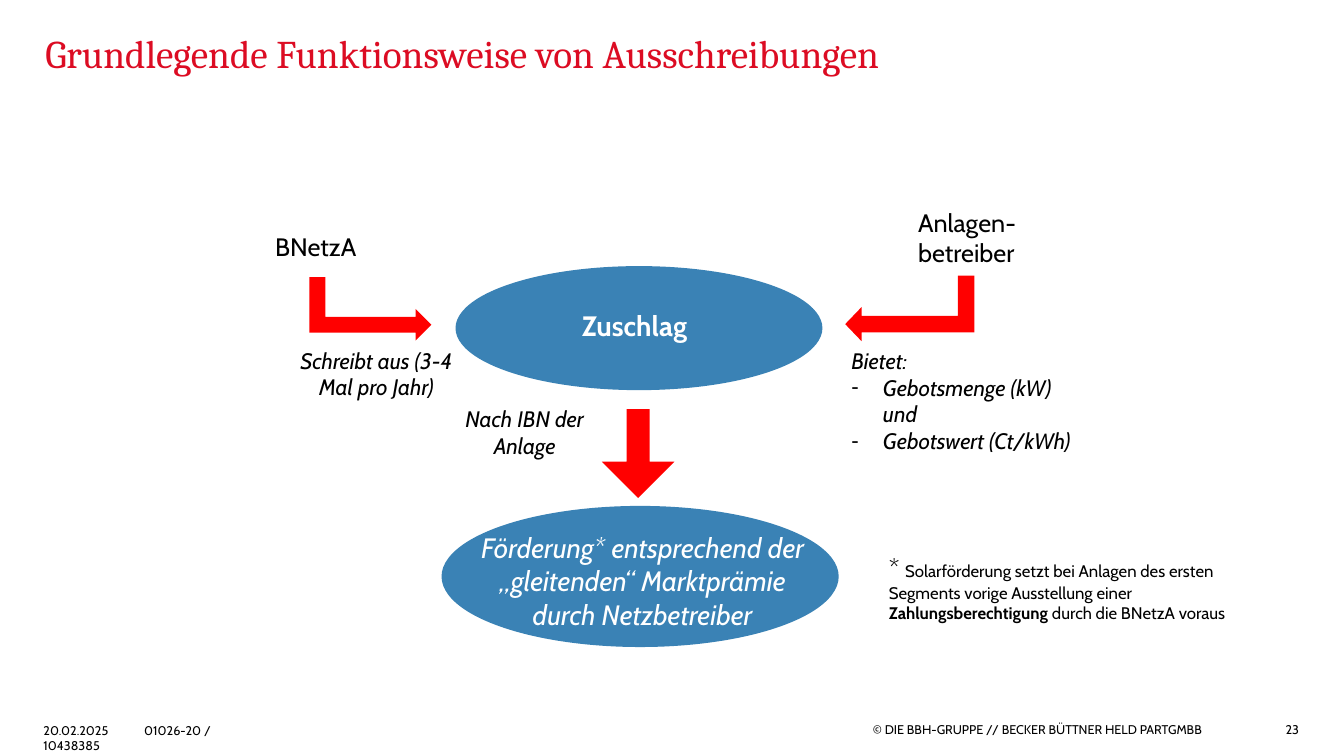
from lxml.etree import SubElement
from pptx import Presentation
from pptx.dml.color import RGBColor
from pptx.enum.shapes import MSO_SHAPE as Shape
from pptx.enum.text import MSO_ANCHOR as Anchor, MSO_AUTO_SIZE as AutoSize, PP_ALIGN as Align
from pptx.oxml.ns import qn
from pptx.util import Pt

COLORS = {"title": "DC0C23", "oval": "3A82B5", "arrow": "FF0000", "dark": "000000", "light": "FFFFFF"}

TITLE = "Grundlegende Funktionsweise von Ausschreibungen"
BID_LINES = ["Bietet:", "Gebotsmenge (kW) und", "Gebotswert (Ct/kWh)"]
FOOTNOTE = [
    ("* ", {"size": 18}),
    ("Solarförderung setzt bei Anlagen des ersten Segments vorige Ausstellung einer ", {}),
    ("Zahlungsberechtigung", {"bold": True}),
    (" durch die BNetzA voraus", {}),
]
CAPTION = {"size": 16, "italic": True, "align": Align.CENTER}
FOOTER = {"size": 9, "inset": False}

OVALS = [(315.4, 361.4, 283.7, 100.8), (325.4, 190.1, 262.1, 88.6)]
ARROWS = [
    (Shape.RIGHT_ARROW, (424.1, 298.1, 63.4, 51.8), 90, False, [0.32, 0.5]),
    (Shape.BENT_UP_ARROW, (241.9, 177.1, 45.4, 87.1), 90, False, [0.25, 0.25, 0.25]),
    (Shape.BENT_UP_ARROW, (626.4, 174.2, 46.8, 92.2), 270, True, [0.25, 0.26, 0.25]),
]
LABELS = [
    ("BNetzA", (189.4, 162, 75.6, 28.8), {"size": 18}),
    ("Anlagen-betreiber", (648.7, 144.7, 85, 51.1), {"size": 18}),
    ("Zuschlag", (357.1, 216.7, 192.2, 31.7),
     {"size": 20, "bold": True, "color": "light", "align": Align.CENTER}),
    ("Förderung* entsprechend der „gleitenden“ Marktprämie durch Netzbetreiber",
     (331.2, 375.1, 255.6, 79.9),
     {"size": 20, "italic": True, "color": "light", "align": Align.CENTER}),
    ("Schreibt aus (3-4 Mal pro Jahr)", (206.6, 244.1, 124.6, 46.1), CAPTION),
    ("Nach IBN der Anlage", (319.7, 285.8, 110.2, 46.1), CAPTION),
    (FOOTNOTE, (627.8, 391, 254.9, 72.7), {"size": 12}),
    ("20.02.2025\t01026-20 / 10438385", (31, 516.2, 123.8, 10.8), {**FOOTER, "tab": 53}),
    ("© DIE BBH-GRUPPE // BECKER BÜTTNER HELD PARTGMBB", (623.5, 509.8, 249.1, 22.3),
     {**FOOTER, "anchor": Anchor.MIDDLE}),
    ("23", (894.2, 512.6, 33.8, 17.3), {**FOOTER, "anchor": Anchor.MIDDLE, "align": Align.RIGHT}),
]


def place(box, frame):
    box.left, box.top, box.width, box.height = map(Pt, frame)


def write(para, text, size=18, font="Cabin", color="dark", bold=False, italic=False,
          align=Align.LEFT, bullet=None, tab=None):
    props = para._p.get_or_add_pPr()
    props.set("marL", str(Pt(22.5) if bullet else 0))
    props.set("indent", str(Pt(-22.5) if bullet else 0))
    if bullet:
        SubElement(props, qn("a:buFontTx"))
        SubElement(props, qn("a:buChar")).set("char", bullet)
    else:
        SubElement(props, qn("a:buNone"))
    if tab:
        stop = SubElement(SubElement(props, qn("a:tabLst")), qn("a:tab"))
        stop.set("pos", str(Pt(tab)))
        stop.set("algn", "l")
    para.alignment = align
    para.line_spacing = 1.0
    para.space_before = para.space_after = Pt(0)
    for words, changes in [(text, {})] if isinstance(text, str) else text:
        span = para.add_run()
        span.text = words
        span.font.name = font
        span.font.size = Pt(changes.get("size", size))
        span.font.bold = changes.get("bold", bold)
        span.font.italic = italic
        span.font.color.rgb = RGBColor.from_string(COLORS[color])


def prepare(box, inset=True, anchor=Anchor.TOP):
    frame = box.text_frame
    frame.word_wrap = True
    frame.auto_size = AutoSize.NONE
    frame.vertical_anchor = anchor
    frame.margin_left = frame.margin_right = Pt(7.2 if inset else 0)
    frame.margin_top = frame.margin_bottom = Pt(3.6 if inset else 0)
    return frame


def add_label(page, text, frame, inset=True, anchor=Anchor.TOP, **style):
    box = page.shapes.add_textbox(*map(Pt, frame))
    write(prepare(box, inset, anchor).paragraphs[0], text, **style)


def add_filled(page, kind, frame, color):
    box = page.shapes.add_shape(kind, *map(Pt, frame))
    box.shadow.inherit = False
    box.fill.solid()
    box.fill.fore_color.rgb = RGBColor.from_string(COLORS[color])
    box.line.fill.background()
    return box


def main():
    deck = Presentation()
    deck.slide_width, deck.slide_height = Pt(960), Pt(540)
    page = deck.slides.add_slide(deck.slide_layouts[1])

    title = page.shapes.title
    place(title, (32.4, 21, 819.4, 65))
    write(prepare(title, inset=False).paragraphs[0], TITLE, size=28, font="Cambria", color="title")

    for frame in OVALS:
        add_filled(page, Shape.OVAL, frame, "oval")
    for kind, frame, turn, flipped, adjustments in ARROWS:
        arrow = add_filled(page, kind, frame, "arrow")
        arrow.rotation = turn
        for index, value in enumerate(adjustments):
            arrow.adjustments[index] = value
        if flipped:
            arrow._element.spPr.find(qn("a:xfrm")).set("flipH", "1")

    bids = page.placeholders[1]
    place(bids, (601, 244.1, 178.6, 85))
    bid_text = prepare(bids)
    for index, line in enumerate(BID_LINES):
        para = bid_text.add_paragraph() if index else bid_text.paragraphs[0]
        write(para, line, size=16, italic=True, bullet="-" if index else None)

    for text, frame, style in LABELS:
        add_label(page, text, frame, **style)
    deck.save("out.pptx")


if __name__ == "__main__":
    main()
